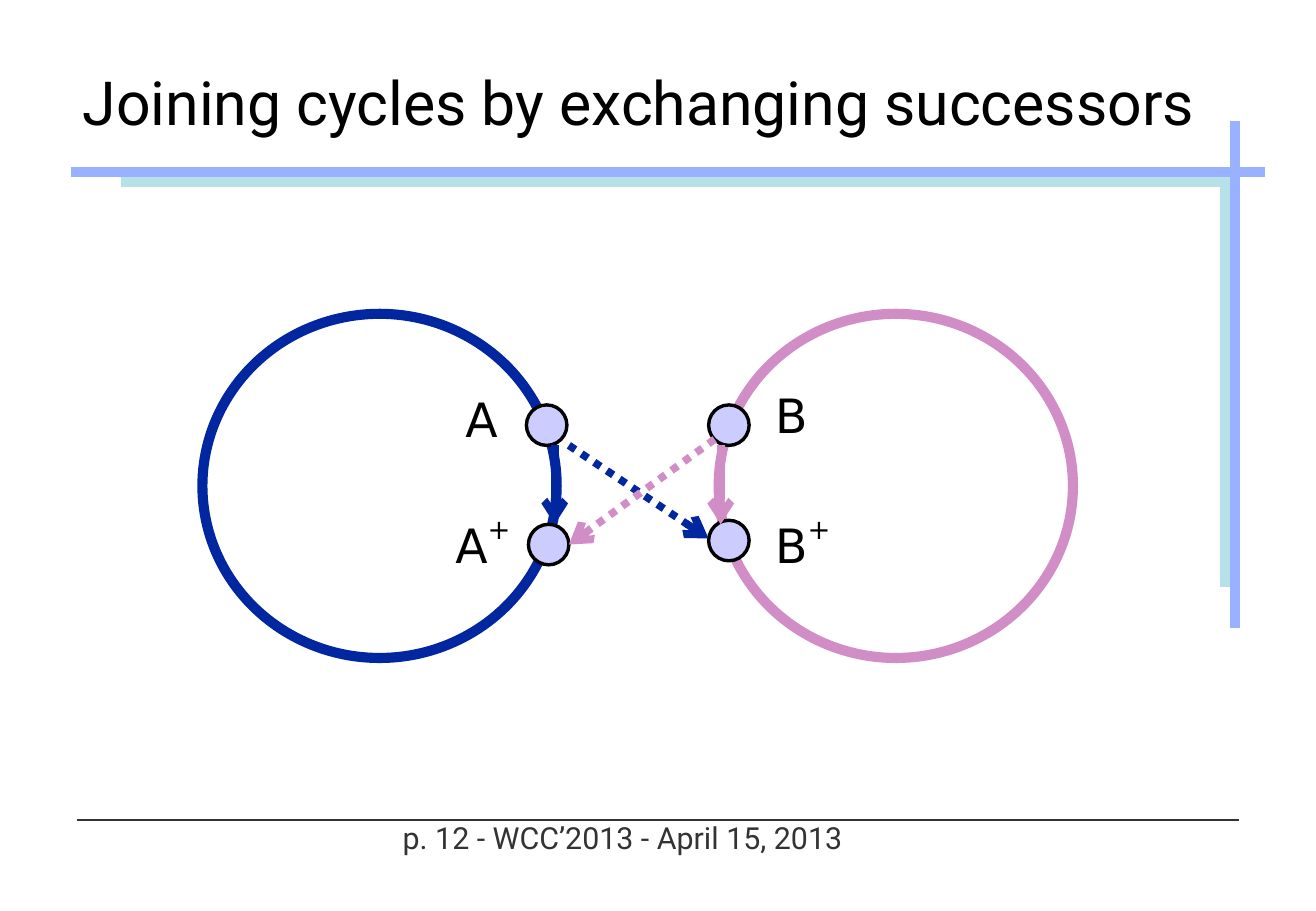
"""Draw two cycles that are joined by exchanging the successors of A and B."""
from lxml.etree import SubElement
from pptx import Presentation
from pptx.dml.color import RGBColor
from pptx.enum.dml import MSO_LINE as Dash
from pptx.enum.shapes import MSO_CONNECTOR as Link, MSO_SHAPE as Form
from pptx.enum.text import MSO_ANCHOR as Anchor, MSO_AUTO_SIZE as Fit, PP_ALIGN as Align
from pptx.oxml.ns import qn
from pptx.util import Inches, Pt

COLS, ROWS = 65, 45
UNIT = Inches(1) / 6
NAVY, PINK, BLUE, TEAL, GREY = "00279F", "D18DC6", "99B1FF", "B5E1E7", "333333"
hue = RGBColor.from_string


def grid(*cells):
    return [round(cell * UNIT) for cell in cells]


def write(box, parts, size, face, tint, align, inset):
    frame = box.text_frame
    frame.word_wrap = box.is_placeholder
    frame.auto_size = Fit.NONE if box.is_placeholder else Fit.SHAPE_TO_FIT_TEXT
    frame.vertical_anchor = Anchor.MIDDLE if box.is_placeholder else Anchor.TOP
    frame.margin_left = frame.margin_right = Inches(inset[0])
    frame.margin_top = frame.margin_bottom = Inches(inset[1])
    line = frame.paragraphs[0]
    line.alignment = align
    for part in parts:
        run = line.add_run()
        run.text = part
        run.font.size, run.font.name = Pt(size), face
        run.font.color.rgb = hue(tint)
        if part == "+":
            run._r.get_or_add_rPr().set("baseline", "50000")


deck = Presentation()
deck.slide_width, deck.slide_height = grid(COLS, ROWS)
slide = deck.slides.add_slide(deck.slide_layouts[5])
shapes = slide.shapes

title = shapes.title
title.left, title.top, title.width, title.height = grid(3, 2, 57.1, 6)
write(title, ["Joining cycles by exchanging successors"], 36, "Roboto", "000000",
      Align.CENTER, (0.08, 0.08))

rules = [
    (3.8, 40.5, 61.2, 40.5, GREY, 1.5),
    (3.5, 8.5, 62.5, 8.5, BLUE, 6),
    (6, 9, 61, 9, TEAL, 6),
    (60.5, 9, 60.5, 29, TEAL, 6),
    (61, 6, 61, 31, BLUE, 6),
]
rings = [
    (10, 15.5, 17.5, 17, None, NAVY, 6),
    (35.5, 15.5, 17.5, 17, None, PINK, 6),
]
nodes = [(x, y, 2, 2, "CCCCFF", "000000", 2)
         for x, y in [(26, 20), (35, 20), (26.1, 25.9), (35, 25.7)]]
arrows = [
    (27.4, 22, 27.4, 25.9, NAVY, None),
    (35.6, 22, 35.6, 25.9, PINK, None),
    (28.1, 22, 35, 26.6, NAVY, Dash.ROUND_DOT),
    (35.3, 21.7, 28.1, 26.9, PINK, Dash.ROUND_DOT),
]

for *ends, tint, width in rules:
    rule = shapes.add_connector(Link.STRAIGHT, *grid(*ends))
    rule.line.color.rgb, rule.line.width = hue(tint), Pt(width)
    SubElement(rule._element.spPr, qn("a:effectLst"))

foot = shapes.add_textbox(*grid(19.1, 40.2, 23.3, 2.3))
write(foot, ["p. 12 - WCC’2013 - April 15, 2013"], 18, "Roboto", GREY,
      Align.CENTER, (0.04, 0.04))

for *place, fill, tint, width in rings + nodes:
    disc = shapes.add_shape(Form.OVAL, *grid(*place))
    disc.shadow.inherit = False
    disc.line.color.rgb, disc.line.width = hue(tint), Pt(width)
    if fill:
        disc.fill.solid()
        disc.fill.fore_color.rgb = hue(fill)
    else:
        disc.fill.background()

for *ends, tint, dash in arrows:
    arrow = shapes.add_connector(Link.STRAIGHT, *grid(*ends))
    arrow.line.color.rgb, arrow.line.width = hue(tint), Pt(4.5)
    if dash:
        arrow.line.dash_style = dash
    SubElement(arrow.line._get_or_add_ln(), qn("a:tailEnd"), type="arrow")
    SubElement(arrow._element.spPr, qn("a:effectLst"))

for x, y, width, parts in [
    (22.4, 19, 2.8, "A"),
    (37.7, 18.8, 2.8, "B"),
    (21.9, 25, 4.1, "A+"),
    (37.7, 25, 4.1, "B+"),
]:
    label = shapes.add_textbox(*grid(x, y, width, 3.4))
    write(label, parts, 28, "DejaVu Sans", "000000", Align.LEFT, (0.1, 0.05))

deck.save("out.pptx")
